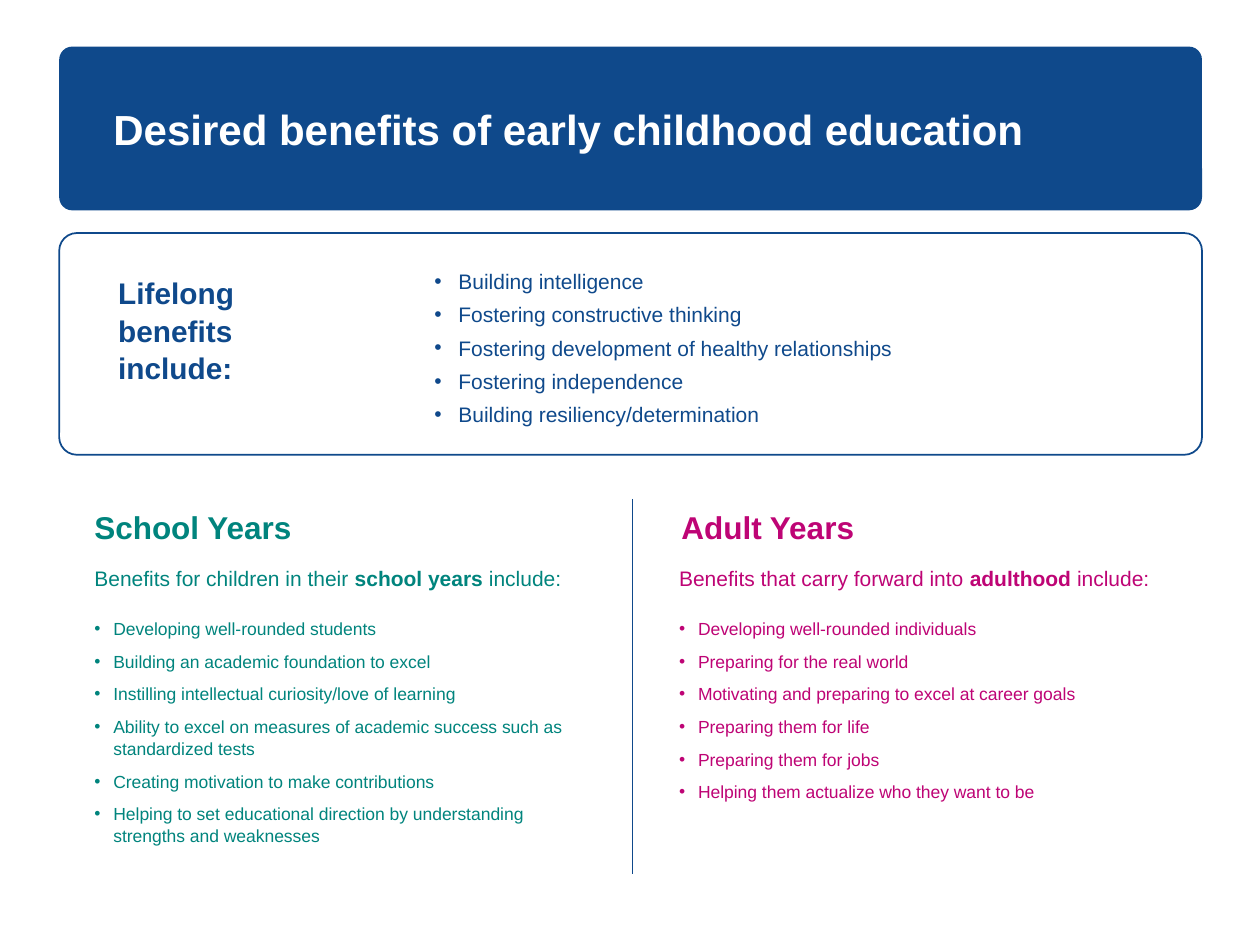
from lxml import etree
from pptx import Presentation
from pptx.dml.color import RGBColor
from pptx.enum import shapes, text
from pptx.oxml.ns import qn
from pptx.util import Inches, Pt

THEME = {
    "font": "Arial", "navy": "0F498B", "teal": "00847D", "pink": "BE0475", "white": "FFFFFF",
    "title": 24, "heading": 18, "lifelong": 17, "body": 12, "detail": 10, "leading": 1.05,
}

TITLE = "Desired benefits of early childhood education"
LIFELONG_HEADING = "Lifelong benefits include:"
LIFELONG_BENEFITS = [
    "Building intelligence",
    "Fostering constructive thinking",
    "Fostering development of healthy relationships",
    "Fostering independence",
    "Building resiliency/determination",
]
STAGES = [
    {
        "heading": "School Years", "heading_box": (0.65, 3.97, 1.78, 0.4),
        "benefits_box": (0.75, 4.51, 3.84, 2.13), "color": "teal",
        "intro": ("Benefits for children in their ", "school years", " include:"),
        "benefits": [
            "Developing well-rounded students",
            "Building an academic foundation to excel",
            "Instilling intellectual curiosity/love of learning",
            "Ability to excel on measures of academic success such as standardized tests",
            "Creating motivation to make contributions",
            "Helping to set educational direction by understanding strengths and weaknesses",
        ],
    },
    {
        "heading": "Adult Years", "heading_box": (5.31, 3.97, 1.59, 0.4),
        "benefits_box": (5.39, 4.51, 4.24, 1.79), "color": "pink",
        "intro": ("Benefits that carry forward into ", "adulthood", " include:"),
        "benefits": [
            "Developing well-rounded individuals",
            "Preparing for the real world",
            "Motivating and preparing to excel at career goals",
            "Preparing them for life",
            "Preparing them for jobs",
            "Helping them actualize who they want to be",
        ],
    },
]


def rgb(color):
    return RGBColor.from_string(THEME[color])


def add_run(paragraph, words, size, color, bold=False):
    run = paragraph.add_run()
    run.text = words
    run.font.name = THEME["font"]
    run.font.size = Pt(THEME[size])
    run.font.bold = bold
    run.font.color.rgb = rgb(color)


def add_box(slide, place, inset=None, wrap=True):
    frame = slide.shapes.add_textbox(*map(Inches, place)).text_frame
    frame.word_wrap = wrap
    if inset is not None:
        frame.margin_left = frame.margin_right = Inches(inset)
        frame.margin_top = frame.margin_bottom = Inches(inset)
    return frame


def add_heading(slide, place, words, size, color, wrap=True):
    heading = add_box(slide, place, wrap=wrap).paragraphs[0]
    heading.line_spacing = THEME["leading"]
    add_run(heading, words, size, color, True)


def add_bullets(frame, benefits, size, color, indent, before=0, after=0):
    for benefit in benefits:
        first = not frame.paragraphs[0].runs
        bullet = frame.paragraphs[0] if first else frame.add_paragraph()
        properties = bullet._p.get_or_add_pPr()
        properties.set("marL", str(Inches(indent)))
        properties.set("indent", str(-Inches(indent)))
        etree.SubElement(properties, qn("a:buFont")).set("typeface", THEME["font"])
        etree.SubElement(properties, qn("a:buChar")).set("char", "•")
        bullet.line_spacing = THEME["leading"]
        bullet.space_before = Pt(0 if first else before)
        bullet.space_after = Pt(after)
        add_run(bullet, benefit, size, color)


def add_panel(slide, place, filled):
    panel = slide.shapes.add_shape(shapes.MSO_SHAPE.ROUNDED_RECTANGLE, *map(Inches, place))
    panel.adjustments[0] = 0.08
    panel.shadow.inherit = False
    if filled:
        panel.fill.solid()
        panel.fill.fore_color.rgb = rgb("navy")
        panel.line.fill.background()
    else:
        panel.fill.background()
        panel.line.color.rgb = rgb("navy")
        panel.line.width = Pt(1)
    return panel


def add_title(slide):
    frame = add_panel(slide, (0.47, 0.37, 9.07, 1.3), True).text_frame
    frame.word_wrap = True
    frame.margin_left = frame.margin_right = Inches(0.4)
    frame.vertical_anchor = text.MSO_ANCHOR.MIDDLE
    title = frame.paragraphs[0]
    title.alignment = text.PP_ALIGN.LEFT
    add_run(title, TITLE, "title", "white", True)


def add_lifelong(slide):
    add_panel(slide, (0.47, 1.85, 9.07, 1.76), False)
    add_heading(slide, (0.84, 2.12, 2.06, 0.67), LIFELONG_HEADING, "lifelong", "navy")
    frame = add_box(slide, (3.35, 2.07, 4.9, 1.34))
    add_bullets(frame, LIFELONG_BENEFITS, "body", "navy", 0.19, before=4)


def add_divider(slide):
    divider = slide.shapes.add_connector(
        shapes.MSO_CONNECTOR.STRAIGHT, *map(Inches, (5.02, 3.96, 5.02, 6.94)))
    divider.line.color.rgb = rgb("navy")
    divider.line.width = Pt(0.5)
    etree.SubElement(divider._element.spPr, qn("a:effectLst"))


def add_stage(slide, stage):
    color = stage["color"]
    add_heading(slide, stage["heading_box"], stage["heading"], "heading", color, wrap=False)
    frame = add_box(slide, stage["benefits_box"], inset=0)
    intro = frame.paragraphs[0]
    intro.line_spacing = 0.9
    intro.space_after = Pt(15)
    for position, words in enumerate(stage["intro"]):
        add_run(intro, words, "body", color, bold=position == 1)
    add_bullets(frame, stage["benefits"], "detail", color, 0.15, after=6)


def main():
    """Build the slide on the benefits of early childhood education."""
    deck = Presentation()
    deck.slide_width, deck.slide_height = Inches(10), Inches(7.5)
    slide = deck.slides.add_slide(deck.slide_layouts[6])
    add_title(slide)
    add_lifelong(slide)
    add_divider(slide)
    for stage in STAGES:
        add_stage(slide, stage)
    deck.save("out.pptx")


if __name__ == "__main__":
    main()
